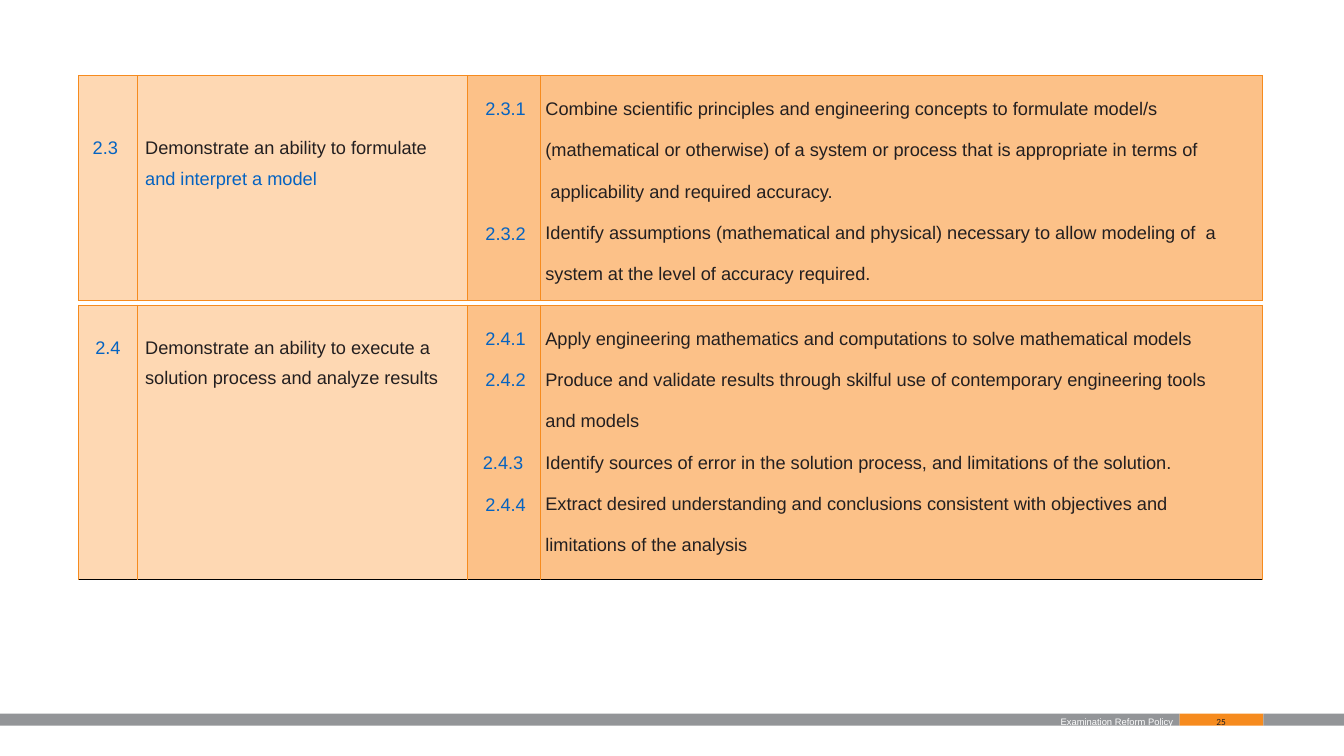
from lxml.etree import SubElement
from pptx import Presentation
from pptx.dml.color import RGBColor
from pptx.enum.shapes import MSO_SHAPE
from pptx.enum.text import PP_ALIGN
from pptx.oxml.ns import qn
from pptx.util import Emu, Pt

# Content: each line is (row of text in its cell, text, colour)
HEX = {"ink": "231F20", "blue": "0563C1", "orange": "F68B1E", "grey": "939598",
       "light": "FED8B3", "deep": "FCC188", "white": "FFFFFF", "black": "000000"}
TABLES = [
    {"top": 75, "high": 222, "drop": 52, "base": "orange",
     "code": "2.3 ",
     "skill": [("Demonstrate an ability to formulate", "ink"),
               ("and interpret a model", "blue")],
     "marks": [(0, "2.3.1"), (3, "2.3.2")],
     "points": ["Combine scientific principles and engineering concepts to formulate model/s",
                "(mathematical or otherwise) of a system or process that is appropriate in terms of",
                " applicability and required accuracy.",
                "Identify assumptions (mathematical and physical) necessary to allow modeling of  a",
                "system at the level of accuracy required."]},
    {"top": 303, "high": 272, "drop": 22, "base": "black",
     "code": "2.4",
     "skill": [("Demonstrate an ability to execute a", "ink"),
               ("solution process and analyze results", "ink")],
     "marks": [(0, "2.4.1"), (1, "2.4.2"), (3, "2.4.3 "), (4, "2.4.4")],
     "points": ["Apply engineering mathematics and computations to solve mathematical models",
                "Produce and validate results through skilful use of contemporary engineering tools",
                "and models",
                "Identify sources of error in the solution process, and limitations of the solution.",
                "Extract desired understanding and conclusions consistent with objectives and",
                "limitations of the analysis"]},
]
LEFT, COLS = 78, (58, 328, 72, 716)
BARS = [(0, 1170, "grey"), (1170, 83, "orange"), (1253, 80, "grey")]
FOOT, THICK = 708, 12
NOTES = [("25", 1170, 82, PP_ALIGN.CENTER, "Calibri", "ink"),
         ("Examination Reform Policy", 931, 233, PP_ALIGN.RIGHT, "Arial", "white")]
SIZE, PITCH = 13, 30  # points: text size, height of a double-spaced line


def px(n):
    return Emu(n * 9144)


def rgb(name):
    return RGBColor.from_string(HEX[name])


def style(par, size, face, tint, align):
    par.alignment = align
    par.font.size, par.font.name = Pt(size), face
    par.font.color.rgb = rgb(tint)


def edge(cell, base):
    props = cell._tc.get_or_add_tcPr()
    for spot, side in enumerate("LRTB"):
        line = SubElement(props, qn("a:ln" + side), w=str(Pt(0.75)))
        fill = SubElement(line, qn("a:solidFill"))
        SubElement(fill, qn("a:srgbClr"), val=HEX[base if side == "B" else "orange"])
        props.insert(spot, line)


def write(cell, lines, pitch, align):
    frame, last = cell.text_frame, -1
    for row, text, tint in lines:
        par = frame.paragraphs[0] if last < 0 else frame.add_paragraph()
        par.text = text
        style(par, SIZE, "Arial", tint, align)
        par.line_spacing = pitch
        if last >= 0:
            par.space_before = Pt((row - last - 1) * PITCH + (pitch == 2) * 0.5)
        last = row


deck = Presentation()
deck.slide_width, deck.slide_height = px(1333), px(750)
slide = deck.slides.add_slide(deck.slide_layouts[6])
shapes = slide.shapes

# Footer band
for left, wide, tint in BARS:
    bar = shapes.add_shape(MSO_SHAPE.RECTANGLE, px(left), px(FOOT), px(wide), px(THICK))
    bar.shadow.inherit = False
    bar.fill.solid()
    bar.fill.fore_color.rgb = rgb(tint)
    bar.line.fill.background()
for text, left, wide, align, face, tint in NOTES:
    frame = shapes.add_textbox(px(left), px(FOOT), px(wide), px(THICK)).text_frame
    frame.word_wrap = True
    frame.margin_left = frame.margin_right = frame.margin_bottom = 0
    frame.margin_top = px(2)
    frame.text = text
    style(frame.paragraphs[0], 6.7, face, tint, align)

# Competency tables
for data in TABLES:
    grid = shapes.add_table(1, len(COLS), px(LEFT), px(data["top"]),
                            px(sum(COLS)), px(data["high"])).table
    grid.first_row = grid.horz_banding = False
    skill = [(i, *line) for i, line in enumerate(data["skill"])]
    marks = [(i, text, "blue") for i, text in data["marks"]]
    points = [(i, text, "ink") for i, text in enumerate(data["points"])]
    parts = [
        ([(0, data["code"], "blue")], 1.5, PP_ALIGN.CENTER, "light", 0, data["drop"]),
        (skill, 1.5, PP_ALIGN.LEFT, "light", 8, data["drop"]),
        (marks, 2.0, PP_ALIGN.CENTER, "deep", 3, 3),
        (points, 2.0, PP_ALIGN.LEFT, "deep", 5, 3),
    ]
    for col, (lines, pitch, align, tint, inset, drop) in enumerate(parts):
        grid.columns[col].width = px(COLS[col])
        cell = grid.cell(0, col)
        cell.margin_left, cell.margin_top = px(inset), px(drop)
        cell.margin_right = cell.margin_bottom = 0
        cell.fill.solid()
        cell.fill.fore_color.rgb = rgb(tint)
        edge(cell, data["base"])
        write(cell, lines, pitch, align)

deck.save("out.pptx")
